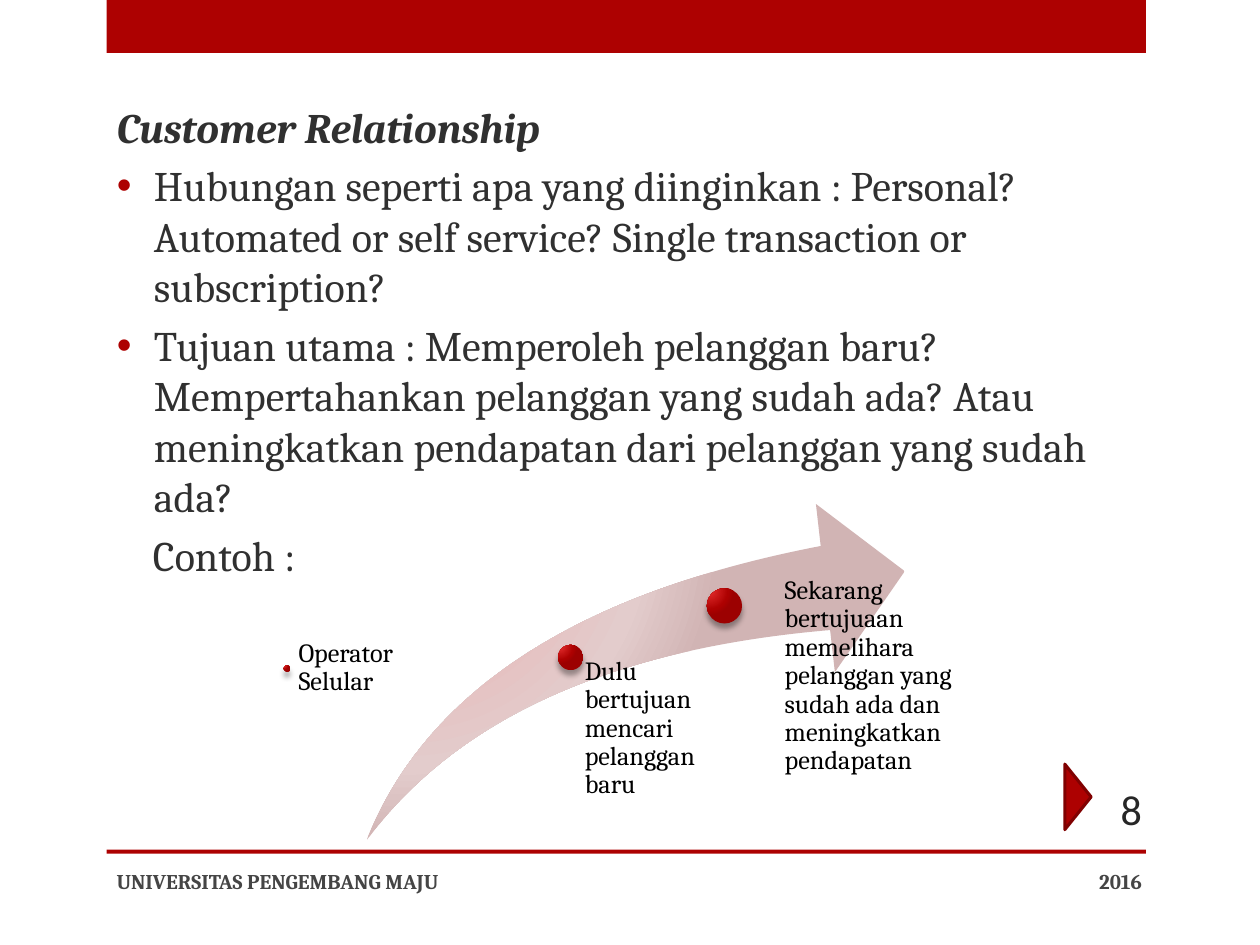
from dataclasses import dataclass

from lxml import etree
from pptx import Presentation
from pptx.dml.color import RGBColor
from pptx.enum.shapes import MSO_SHAPE
from pptx.enum.text import MSO_ANCHOR, MSO_AUTO_SIZE, PP_ALIGN
from pptx.oxml.ns import qn
from pptx.util import Cm, Pt

RECT, OVAL = MSO_SHAPE.RECTANGLE, MSO_SHAPE.OVAL
SWOOSH, EXTRACT = MSO_SHAPE.SWOOSH_ARROW, MSO_SHAPE.FLOWCHART_EXTRACT
TOP, MIDDLE = MSO_ANCHOR.TOP, MSO_ANCHOR.MIDDLE
LEFT, RIGHT = PP_ALIGN.LEFT, PP_ALIGN.RIGHT


@dataclass(frozen=True)
class Theme:
    accent: str = "AD0101"
    accent_dark: str = "800101"
    body: str = "303030"
    footer: str = "454545"
    number: str = "262626"
    label: str = "000000"
    serif: str = "Cambria"
    sans: str = "Calibri"
    body_size: float = 24
    label_size: float = 15
    footer_size: float = 12
    dot_stops: tuple = ((0, "E62F2F"), (76, "AD0101"), (100, "9C0101"))
    arrow_stops: tuple = ((0, "EAA7A7"), (76, "E3CCCC"), (100, "D1B4B4"))


T = Theme()


def add_run(p, text, size, color, font=T.serif, bold=False, italic=False):
    r = p.add_run()
    r.text = text
    f = r.font
    f.name, f.size, f.bold, f.italic = font, Pt(size), bold, italic
    f.color.rgb = RGBColor.from_string(color)


def add_text(s, box, text, size, color, font=T.serif, bold=False,
             align=LEFT, anchor=MIDDLE):
    tf = s.shapes.add_textbox(*map(Cm, box)).text_frame
    tf.word_wrap = True
    tf.vertical_anchor = anchor
    p = tf.paragraphs[0]
    p.alignment = align
    add_run(p, text, size, color, font, bold)
    return tf


def add_shape(s, kind, box, color=T.accent):
    sp = s.shapes.add_shape(kind, *map(Cm, box))
    sp.shadow.inherit = False
    sp.fill.solid()
    sp.fill.fore_color.rgb = RGBColor.from_string(color)
    sp.line.fill.background()
    return sp


def sub(parent, tag, **attrs):
    return etree.SubElement(parent, qn(tag), {k: str(v) for k, v in attrs.items()})


def fill_radial(sp, stops):
    solid = sp._element.spPr.find(qn("a:solidFill"))
    grad = etree.Element(qn("a:gradFill"), rotWithShape="1")
    gs_list = sub(grad, "a:gsLst")
    for pos, color in stops:
        sub(sub(gs_list, "a:gs", pos=pos * 1000), "a:srgbClr", val=color)
    circle = sub(grad, "a:path", path="circle")
    sub(circle, "a:fillToRect", l=15000, t=15000, r=100000, b=100000)
    solid.getparent().replace(solid, grad)


def add_shadow(sp):
    effects = sp._element.spPr.find(qn("a:effectLst"))
    shadow = sub(effects, "a:outerShdw", blurRad=Pt(3), dist=Pt(3),
                 dir=5400000, rotWithShape=0)
    sub(sub(shadow, "a:srgbClr", val="000000"), "a:alpha", val=35000)


def set_indent(p, margin, bullet):
    pPr = p._p.get_or_add_pPr()
    pPr.set("marL", str(Cm(margin)))
    pPr.set("indent", str(-Cm(margin) if bullet else 0))
    if bullet:
        sub(sub(pPr, "a:buClr"), "a:srgbClr", val=T.accent)
        sub(pPr, "a:buFont", typeface="Arial")
        sub(pPr, "a:buChar", char="•")
    else:
        sub(pPr, "a:buNone")


def build_frame(s, x, y, w):
    add_shape(s, RECT, (x, y, w, 1.07))
    add_shape(s, RECT, (x, y + 17.13, w, 0.08))


def build_body(ph, x, y, w, h):
    ph.left, ph.top, ph.width, ph.height = map(Cm, (x, y, w, h))
    tf = ph.text_frame
    tf.auto_size = MSO_AUTO_SIZE.NONE
    tf.vertical_anchor = TOP
    lines = [
        ("Customer Relationship", 0, False, True),
        ("Hubungan seperti apa yang diinginkan : Personal? Automated or self "
         "service? Single transaction or subscription?", 0.75, True, False),
        ("Tujuan utama : Memperoleh pelanggan baru? Mempertahankan pelanggan "
         "yang sudah ada? Atau meningkatkan pendapatan dari pelanggan yang "
         "sudah ada?", 0.75, True, False),
        ("Contoh :", 0.73, False, False),
    ]
    for i, (text, margin, bullet, heading) in enumerate(lines):
        p = tf.add_paragraph() if i else tf.paragraphs[0]
        p.space_before = Pt(T.body_size * 0.2)
        set_indent(p, margin, bullet)
        add_run(p, text, T.body_size, T.body, bold=heading, italic=heading)


def build_footer(s, x, y, w):
    h = 1.02
    date_w, number_w = 5.92, 2.12
    right = x + w
    add_text(s, (right - date_w, y, date_w, h), "2016", T.footer_size,
             T.footer, bold=True, align=RIGHT)
    add_text(s, (x, y, 13.54, h), "UNIVERSITAS PENGEMBANG MAJU",
             T.footer_size, T.footer, bold=True)
    add_text(s, (right - number_w, y - 1.45, number_w, h), "8", T.body_size,
             T.number, T.sans, align=RIGHT)
    marker = add_shape(s, EXTRACT, (right - 2.2, y - 1.45, 1.32, 0.53))
    marker.rotation = 90
    marker.line.color.rgb = RGBColor.from_string(T.accent_dark)
    marker.line.width = Pt(1.75)


def build_timeline(s, x, y):
    arrow = add_shape(s, SWOOSH, (x + 1.67, y, 10.85, 6.78))
    arrow.adjustments[0] = arrow.adjustments[1] = 0.25
    fill_radial(arrow, T.arrow_stops)
    steps = [
        ((0, 3.25, 0.14), (0.15, 2.74, 2.51, 1.96), 0.15, "Operator Selular"),
        ((5.53, 2.84, 0.51), (5.79, 3.1, 2.59, 3.68), 0.28,
         "Dulu bertujuan mencari pelanggan baru"),
        ((8.53, 1.7, 0.71), (9.72, 1.47, 3.91, 4.7), 0.38,
         "Sekarang bertujuaan memelihara pelanggan yang sudah ada dan "
         "meningkatkan pendapatan"),
    ]
    for (dx, dy, d), (tx, ty, tw, th), inset, text in steps:
        dot = add_shape(s, OVAL, (x + dx, y + dy, d, d))
        fill_radial(dot, T.dot_stops)
        add_shadow(dot)
        tf = add_text(s, (x + tx, y + ty, tw, th), text, T.label_size,
                      T.label, anchor=TOP)
        tf.margin_left = Cm(inset)
        tf.margin_top = tf.margin_right = tf.margin_bottom = 0
        tf.paragraphs[0].line_spacing = 0.9


def main():
    prs = Presentation()
    prs.slide_width, prs.slide_height = Cm(25.4), Cm(19.05)
    s = prs.slides.add_slide(prs.slide_layouts[1])
    title = s.shapes.title._element
    title.getparent().remove(title)
    build_frame(s, 2.15, 0, 20.95)
    build_body(s.placeholders[1], 2.1, 1.91, 20.96, 15.16)
    build_footer(s, 2.1, 17.25, 21.17)
    build_timeline(s, 5.72, 10.16)
    prs.save("out.pptx")


if __name__ == "__main__":
    main()
